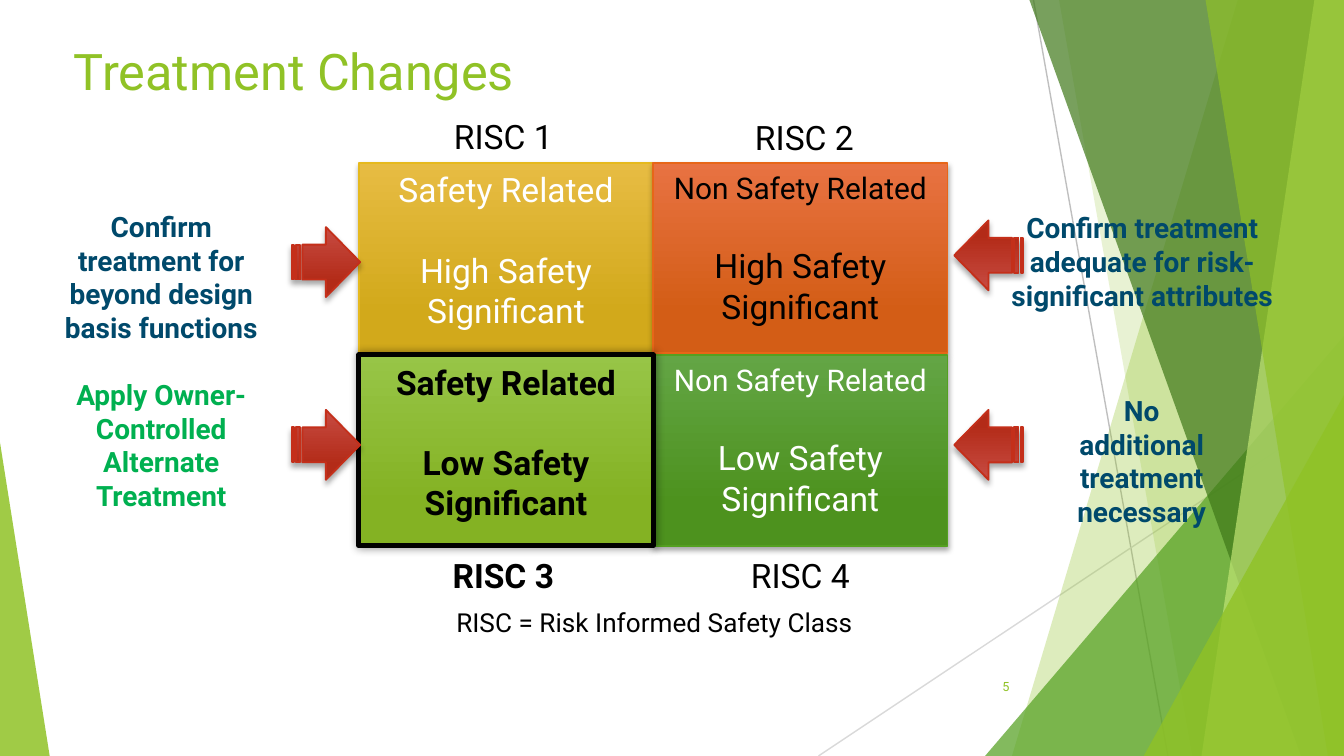
from lxml import etree
from pptx import Presentation
from pptx.dml.color import RGBColor
from pptx.enum import shapes, text
from pptx.oxml.ns import qn
from pptx.util import Inches, Pt

WIDE = 10
HIGH = WIDE * 9 / 16
FONT = "Roboto"
LIME, NAVY, BLACK, WHITE = "90C226", "00496B", "000000", "FFFFFF"
SHAPE, TOP, MID = shapes.MSO_SHAPE, text.MSO_ANCHOR.TOP, text.MSO_ANCHOR.MIDDLE
LEFT, CENTER, RIGHT = text.PP_ALIGN.LEFT, text.PP_ALIGN.CENTER, text.PP_ALIGN.RIGHT
DROP = (35, 3, 2, 90)
GLOW = (40, 5, 0, 0)


def rgb(code):
    return RGBColor.from_string(code)


def inch(*nums):
    return [Inches(n) for n in nums]


def add_alpha(color, pct):
    etree.SubElement(color, qn("a:alpha"), val=str(pct * 1000))


def write(frame, rows, color, bold=False, align=CENTER):
    """Fill a frame with (words, size, space before) rows."""
    frame.word_wrap = True
    for i, (words, size, gap) in enumerate(rows):
        para = frame.add_paragraph() if i else frame.paragraphs[0]
        para.alignment = align
        if gap:
            para.space_before = Pt(gap)
        run = para.add_run()
        run.text = words
        font = run.font
        font.name, font.size, font.bold = FONT, Pt(size), bold
        font.color.rgb = rgb(color)


def add_text(slide, box, words, size, color=BLACK, bold=False, align=CENTER):
    frame = slide.shapes.add_textbox(*inch(*box)).text_frame
    write(frame, [(words, size, 0)], color, bold, align)
    return frame


def add_line(slide, ends, color):
    line = slide.shapes.add_connector(shapes.MSO_CONNECTOR.STRAIGHT, *inch(*ends))
    line.line.color.rgb = rgb(color)
    line.line.width = Pt(0.75)
    etree.SubElement(line._element.spPr, qn("a:effectLst"))


def tint(shape, color, pct):
    """Give a flat, see-through fill with no outline."""
    shape.shadow.inherit = False
    shape.fill.solid()
    shape.fill.fore_color.rgb = rgb(color)
    shape.line.fill.background()
    add_alpha(shape._element.spPr.find(".//" + qn("a:srgbClr")), pct)


def add_band(slide, top, foot, color, pct):
    """Slanted band from the top edge to the bottom, out to the right edge."""
    form = slide.shapes.build_freeform(*inch(top, 0))
    form.add_line_segments([inch(*p) for p in ((WIDE, 0), (WIDE, HIGH), (foot, HIGH))])
    tint(form.convert_to_shape(), color, pct)


def add_wedge(slide, left, top, width, tip, color, pct):
    box = inch(left, top, width, HIGH - top)
    wedge = slide.shapes.add_shape(SHAPE.ISOSCELES_TRIANGLE, *box)
    wedge.adjustments[0] = tip
    tint(wedge, color, pct)


def add_shaded(slide, kind, box, fade, edge, width=1, shade=DROP):
    """Shape with a top-down gradient, an outline and a soft shadow."""
    shape = slide.shapes.add_shape(kind, *inch(*box))
    shape.fill.gradient()
    shape.fill.gradient_angle = 270
    for stop, color, spot in zip(shape.fill.gradient_stops, fade, (0, 0.78)):
        stop.color.rgb = rgb(color)
        stop.position = spot
    shape.line.color.rgb = rgb(edge)
    shape.line.width = Pt(width)
    shape.shadow.inherit = False
    alpha, blur, dist, angle = shade
    effects = shape._element.spPr.find(qn("a:effectLst"))
    outer = etree.SubElement(
        effects, qn("a:outerShdw"), blurRad=str(Pt(blur)), dist=str(Pt(dist)),
        dir=str(angle * 60000), rotWithShape="0")
    add_alpha(etree.SubElement(outer, qn("a:srgbClr"), val=BLACK), alpha)
    return shape


def add_class(slide, col, row, rows, fade, edge, color, bold=False):
    box = (2.67 + 2.19 * col, 1.21 + 1.43 * row, 2.19, 1.42)
    look = (2.75, GLOW) if bold else (1, DROP)
    shape = add_shaded(slide, SHAPE.RECTANGLE, box, fade, edge, *look)
    shape.text_frame.vertical_anchor = TOP
    write(shape.text_frame, rows, color, bold)


def add_arrow(slide, left, top, turn):
    box = (left, top, 0.51, 0.52)
    arrow = add_shaded(slide, SHAPE.STRIPED_RIGHT_ARROW, box, ("C74B42", "B32B18"), "C42F1A")
    arrow.rotation = turn


def add_decor(slide):
    add_line(slide, (7.69, 0, 8.69, HIGH), "BFBFBF")
    add_line(slide, (WIDE, 3.02, 6.09, HIGH), "D9D9D9")
    add_band(slide, 9.21, 7.53, LIME, 30)
    add_band(slide, 7.88, 8.87, LIME, 20)
    add_wedge(slide, 7.33, 2.5, 2.67, 1, "54A021", 72)
    add_band(slide, 7.66, 9.68, "3F7819", 70)
    add_band(slide, 9.78, 8.94, "C0E474", 70)
    add_band(slide, 8.97, 9.88, LIME, 65)
    add_wedge(slide, 8.51, 2.94, 1.49, 1, LIME, 80)
    add_wedge(slide, 0, 3.29, 0.37, 0, LIME, 85)


def add_title(slide, words):
    title = slide.shapes.title
    title.left, title.top, title.width, title.height = inch(0.45, 0.25, 7.15, 0.59)
    title.text_frame.vertical_anchor = TOP
    write(title.text_frame, [(words, 27, 0)], LIME, align=LEFT)


def add_grid(slide):
    safe = ("Safety Related", 18, 0)
    non = ("Non Safety Related", 16, 0)
    end = ("Significant", 18, 0)
    add_class(slide, 0, 0, [safe, ("High Safety Significant", 18, 21.5)],
              ("E7BC43", "D2A91B"), "E6B91E", WHITE)
    add_class(slide, 1, 0, [non, ("High Safety", 18, 21.5), end],
              ("E87242", "D35D16"), "E76618", BLACK)
    add_class(slide, 1, 1, [non, ("Low Safety", 18, 21.5), end],
              ("63A545", "4D921E"), "54A021", WHITE)
    add_class(slide, 0, 1, [safe, ("Low Safety Significant", 18, 21.5)],
              ("97C547", "84B223"), BLACK, BLACK, True)
    spots = ((3.25, 0.81), (5.49, 0.82), (3.25, 4.08), (5.46, 4.08))
    for num, spot in enumerate(spots, 1):
        add_text(slide, (*spot, 0.99, 0.41), f"RISC {num}", 18, bold=num == 3)
    add_text(slide, (3.01, 4.46, 3.72, 0.34), "RISC = Risk Informed Safety Class", 14)


def add_notes(slide):
    notes = (
        ((0.29, 1.51, 1.82, 1.11), "Confirm treatment for beyond design basis functions", NAVY),
        ((7.23, 1.52, 2.54, 0.86), "Confirm treatment adequate for risk-significant attributes", NAVY),
        ((7.79, 2.88, 1.41, 0.86), "No additional treatment necessary", NAVY),
        ((0.29, 2.76, 1.82, 1.11), "Apply Owner-Controlled Alternate Treatment", "00B050"),
    )
    for box, words, color in notes:
        add_text(slide, box, words, 15, color, True)
    for left, top, turn in ((7.1, 1.64, 180), (7.1, 3.05, 180), (2.17, 1.69, 0), (2.17, 3.05, 0)):
        add_arrow(slide, left, top, turn)


def main():
    deck = Presentation()
    deck.slide_width, deck.slide_height = inch(WIDE, HIGH)
    slide = deck.slides.add_slide(deck.slide_layouts[5])
    add_decor(slide)
    add_title(slide, "Treatment Changes")
    page = add_text(slide, (7.05, 4.96, 0.56, 0.3), "5", 6.8, LIME, align=RIGHT)
    page.vertical_anchor = MID
    add_grid(slide)
    add_notes(slide)
    deck.save("out.pptx")


if __name__ == "__main__":
    main()
